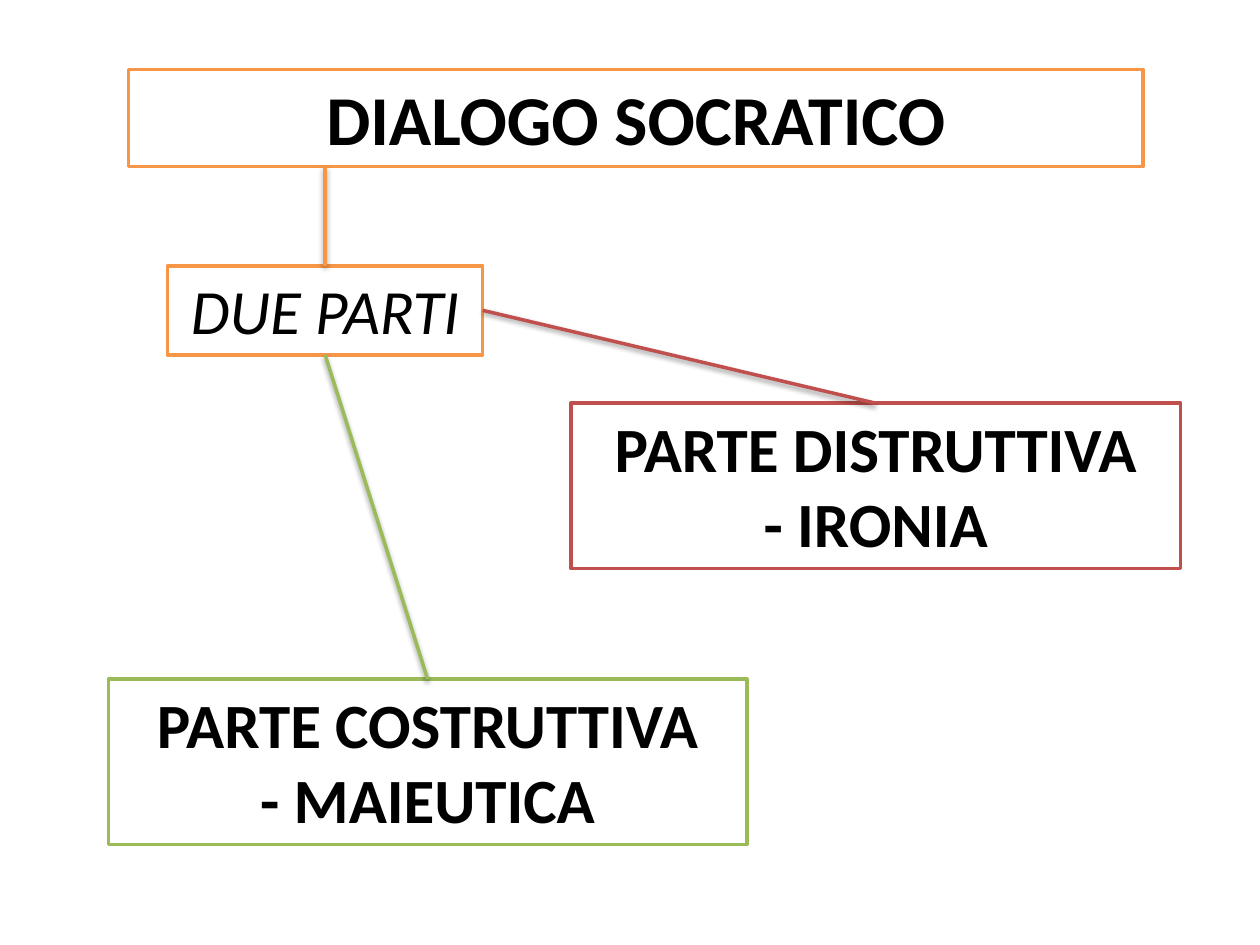
from typing import NamedTuple

from lxml import etree
from pptx import Presentation
from pptx.dml.color import RGBColor
from pptx.enum import shapes, text
from pptx.oxml import ns
from pptx.util import Pt

ORANGE, GREEN, RED = "F79646", "9BBB59", "C0504D"
LINE_WIDTH = 2


class Box(NamedTuple):
    left: float
    top: float
    width: float
    height: float
    color: str
    lines: tuple[str, ...]
    font: dict

    @property
    def center(self) -> float:
        return self.left + self.width / 2

    @property
    def right(self) -> float:
        return self.left + self.width

    @property
    def middle(self) -> float:
        return self.top + self.height / 2

    @property
    def bottom(self) -> float:
        return self.top + self.height


class Link(NamedTuple):
    start: tuple[float, float]
    end: tuple[float, float]
    color: str


def rgb(color: str) -> RGBColor:
    return RGBColor.from_string(color)


def set_line(line, color: str) -> None:
    line.color.rgb = rgb(color)
    line.width = Pt(LINE_WIDTH)


def draw_box(slide, box: Box) -> None:
    frame = slide.shapes.add_shape(
        shapes.MSO_SHAPE.RECTANGLE,
        Pt(box.left), Pt(box.top), Pt(box.width), Pt(box.height))
    frame.shadow.inherit = False
    frame.fill.solid()
    frame.fill.fore_color.rgb = rgb("FFFFFF")
    set_line(frame.line, box.color)

    body = frame.text_frame
    body.word_wrap = True
    body.auto_size = text.MSO_AUTO_SIZE.SHAPE_TO_FIT_TEXT
    body.vertical_anchor = text.MSO_ANCHOR.TOP
    for index, words in enumerate(box.lines):
        paragraph = body.add_paragraph() if index else body.paragraphs[0]
        paragraph.alignment = text.PP_ALIGN.CENTER
        run = paragraph.add_run()
        run.text = words
        run.font.color.rgb = rgb("000000")
        for key, value in box.font.items():
            setattr(run.font, key, value)


def add_soft_shadow(connector) -> None:
    """Give the line a blurred black shadow straight below it."""
    effects = etree.SubElement(connector._element.spPr, ns.qn("a:effectLst"))
    shadow = etree.SubElement(
        effects, ns.qn("a:outerShdw"), blurRad=str(Pt(3.1)),
        dist=str(Pt(1.6)), dir="5400000", rotWithShape="0")
    black = etree.SubElement(shadow, ns.qn("a:srgbClr"), val="000000")
    etree.SubElement(black, ns.qn("a:alpha"), val="38000")


def draw_link(slide, link: Link) -> None:
    connector = slide.shapes.add_connector(
        shapes.MSO_CONNECTOR.STRAIGHT,
        *(Pt(value) for value in link.start + link.end))
    set_line(connector.line, link.color)
    add_soft_shadow(connector)


def main() -> None:
    deck = Presentation()
    deck.slide_width, deck.slide_height = Pt(720), Pt(540)
    slide = deck.slides.add_slide(deck.slide_layouts[6])

    part_font = {"name": "Calibri", "size": Pt(36), "bold": True}
    dialogue = Box(73.5, 39.6, 579.6, 55.7, ORANGE, ("DIALOGO SOCRATICO",),
                   part_font | {"size": Pt(40)})
    two_parts = Box(95.8, 151.9, 180, 50.9, ORANGE, ("DUE PARTI",),
                    part_font | {"bold": False, "italic": True})
    constructive = Box(61.9, 388.1, 365, 94.5, GREEN,
                       ("PARTE COSTRUTTIVA", "- MAIEUTICA"), part_font)
    destructive = Box(326.2, 230.4, 348.5, 94.5, RED,
                      ("PARTE DISTRUTTIVA", "- IRONIA"), part_font)

    for box in (dialogue, two_parts, constructive, destructive):
        draw_box(slide, box)

    links = (
        Link((two_parts.center, two_parts.top),
             (two_parts.center, dialogue.bottom), ORANGE),
        Link((two_parts.right, two_parts.middle),
             (destructive.center, destructive.top), RED),
        Link((two_parts.center, two_parts.bottom),
             (constructive.center, constructive.top), GREEN),
    )
    for link in links:
        draw_link(slide, link)

    deck.save("out.pptx")


if __name__ == "__main__":
    main()
